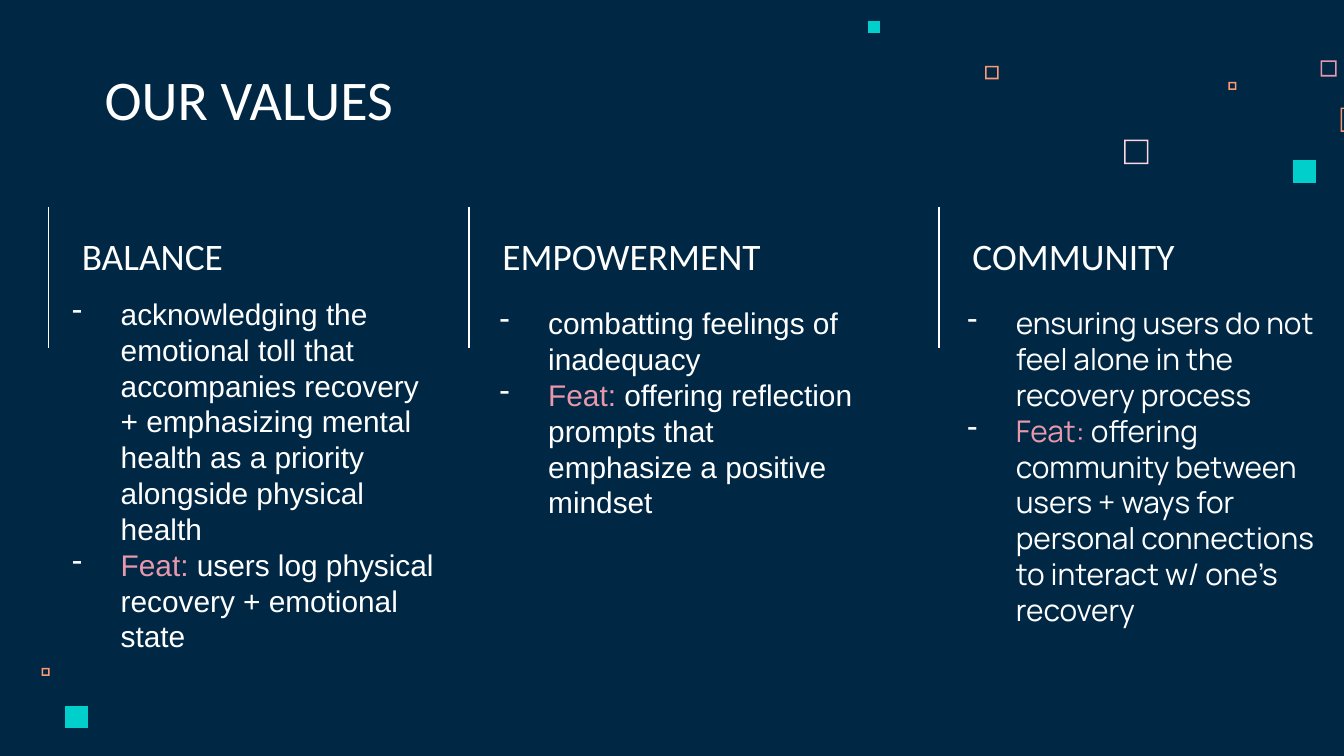
from pptx import Presentation
from pptx.dml.color import RGBColor
from pptx.enum.shapes import MSO_CONNECTOR as Connector
from pptx.enum.text import MSO_ANCHOR as Anchor
from pptx.oxml.ns import qn
from pptx.util import Pt
from lxml.etree import SubElement

NAVY = RGBColor(0x00, 0x28, 0x45)
WHITE = RGBColor(0xFF, 0xFF, 0xFF)
ROSE = RGBColor(0xE8, 0x98, 0xAC)
BLUSH = RGBColor(0xFF, 0xD6, 0xE1)
ORANGE = RGBColor(0xFF, 0x99, 0x73)
TEAL = RGBColor(0x00, 0xCF, 0xCC)

SQUARES = [
    (602.2, 74.9, 13.1, BLUSH, True),
    (707.5, 32.4, 8.6, ROSE, True),
    (658.1, 43.9, 4.3, ORANGE, True),
    (718.2, 57.6, 13, ORANGE, True),
    (692.6, 85.7, 12.3, TEAL, False),
    (527.8, 35.3, 7.2, ORANGE, True),
    (465.1, 11.5, 6.4, TEAL, False),
    (22.3, 357.8, 4.3, ORANGE, True),
    (34.6, 378, 12.3, TEAL, False),
]

COLUMNS = [
    (25.9, "BALANCE", "Arial", -4.3, 40.3,
     "acknowledging the emotional toll that accompanies recovery "
     "+ emphasizing mental health as a priority alongside physical health",
     " users log physical recovery + emotional state"),
    (251.3, "EMPOWERMENT", "Arial", -0.7, 45.3,
     "combatting feelings of inadequacy",
     " offering reflection prompts that emphasize a positive mindset"),
    (503.1, "COMMUNITY", "Manrope", -2, 45.3,
     "ensuring users do not feel alone in the recovery process",
     " offering community between users + ways for personal connections "
     "to interact w/ one’s recovery"),
]


def add_square(slide, left, top, size, color, hollow):
    right, bottom = left + size, top + size
    builder = slide.shapes.build_freeform(Pt(left), Pt(top))
    builder.add_line_segments([(Pt(left), Pt(bottom)), (Pt(right), Pt(bottom)),
                               (Pt(right), Pt(top))])
    if hollow:
        edge = 0.8
        builder.move_to(Pt(right - edge), Pt(top + edge))
        builder.add_line_segments([(Pt(right - edge), Pt(bottom - edge)),
                                   (Pt(left + edge), Pt(bottom - edge)),
                                   (Pt(left + edge), Pt(top + edge))])
    shape = builder.convert_to_shape()
    shape.shadow.inherit = False
    shape.fill.solid()
    shape.fill.fore_color.rgb = color
    shape.line.fill.background()


def add_text_frame(slide, left, top, width, height, anchor):
    text_frame = slide.shapes.add_textbox(
        Pt(left), Pt(top), Pt(width), Pt(height)).text_frame
    text_frame.word_wrap = True
    text_frame.vertical_anchor = anchor
    text_frame.margin_left = text_frame.margin_right = Pt(7.2)
    text_frame.margin_top = text_frame.margin_bottom = Pt(7.2)
    return text_frame


def format_run(run, font_name, size, color=WHITE):
    run.font.name = font_name
    run.font.size = Pt(size)
    run.font.color.rgb = color


def add_heading(slide, left, top, width, height, text, size):
    text_frame = add_text_frame(slide, left, top, width, height, Anchor.BOTTOM)
    text_frame.text = text
    format_run(text_frame.paragraphs[0].runs[0], "Calibri", size)


def add_dash(paragraph):
    properties = paragraph._p.get_or_add_pPr()
    properties.set("marL", str(Pt(36)))
    properties.set("indent", str(Pt(-26)))
    color = SubElement(properties, qn("a:buClr"))
    SubElement(color, qn("a:srgbClr"), val=str(WHITE))
    SubElement(properties, qn("a:buChar"), char="-")


def add_body(slide, left, top, width, height, font_name, value, feature):
    text_frame = add_text_frame(slide, left, top, width, height, Anchor.TOP)
    text_frame.text = f"{value}\nFeat:"
    text_frame.paragraphs[1].add_run().text = feature
    for paragraph in text_frame.paragraphs:
        paragraph.line_spacing = Pt(19.2)
        add_dash(paragraph)
        for run in paragraph.runs:
            format_run(run, font_name, 16, ROSE if run.text == "Feat:" else WHITE)


def add_rule(slide, left, top, height):
    rule = slide.shapes.add_connector(
        Connector.STRAIGHT, Pt(left), Pt(top), Pt(left), Pt(top + height))
    rule.line.color.rgb = WHITE
    rule.line.width = Pt(0.75)
    SubElement(rule._element.spPr, qn("a:effectLst"))


def add_column(slide, left, top, heading, font_name, shift, drop, value, feature):
    add_rule(slide, left, top, 75.6)
    add_heading(slide, left + 10.8, top, 169.2, 45.4, heading, 20)
    add_body(slide, left + shift, top + drop, 219.6, 203, font_name, value, feature)


def main():
    presentation = Presentation()
    presentation.slide_width = Pt(720)
    presentation.slide_height = Pt(405)
    slide = presentation.slides.add_slide(presentation.slide_layouts[6])
    slide.background.fill.solid()
    slide.background.fill.fore_color.rgb = NAVY
    for square in SQUARES:
        add_square(slide, *square)
    add_heading(slide, 49, 32.4, 360, 45.4, "OUR VALUES", 30)
    for left, *content in COLUMNS:
        add_column(slide, left, 110.9, *content)
    presentation.save("out.pptx")


if __name__ == "__main__":
    main()
